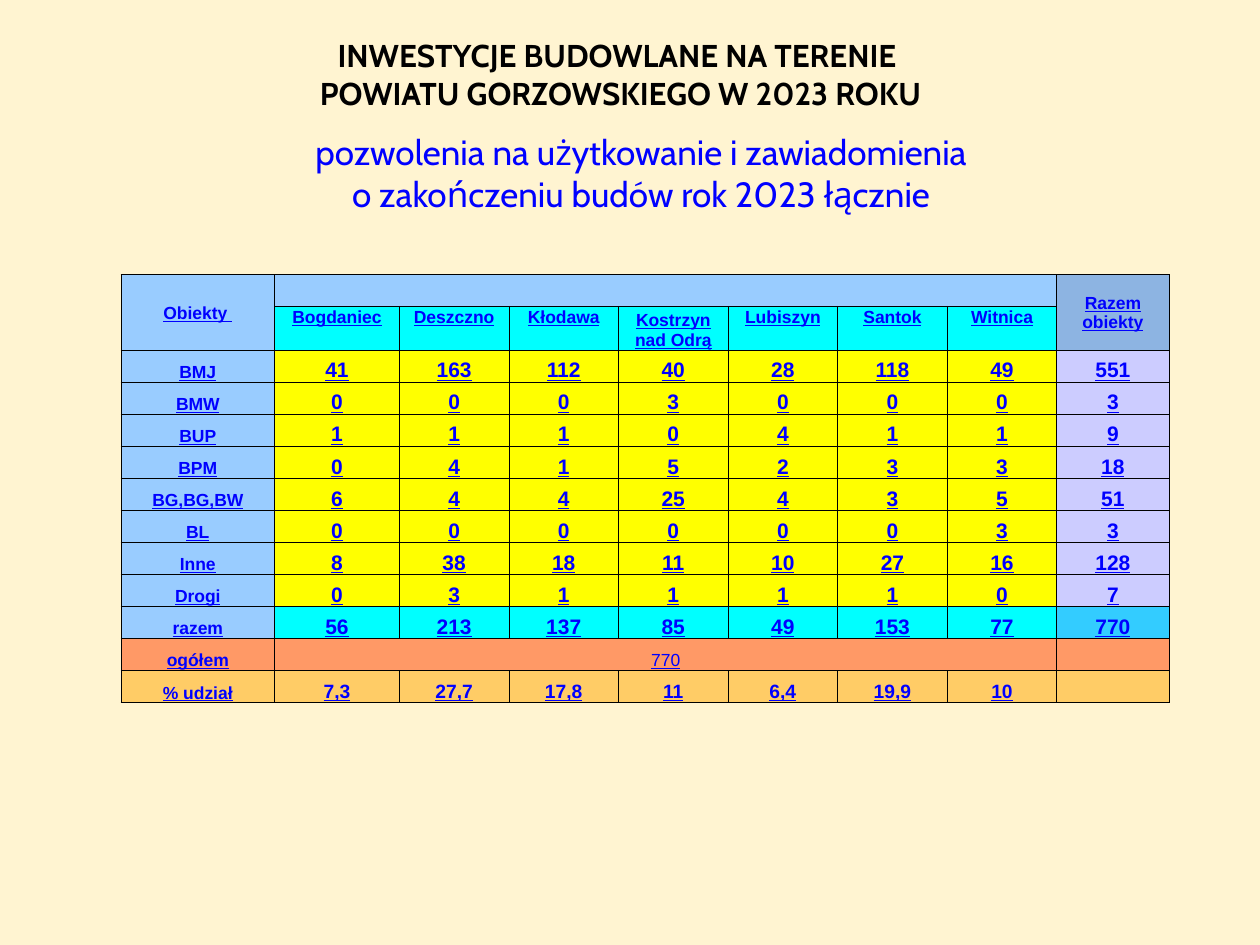
from lxml.etree import SubElement as Sub
from pptx import Presentation
from pptx.dml.color import RGBColor as RGB
from pptx.enum.text import MSO_ANCHOR as Anchor, PP_ALIGN as Align
from pptx.oxml.ns import qn
from pptx.util import Inches, Pt

COLORS = {
    "cream": "FFF4D1", "black": "000000", "text": "0000FF",
    "sky": "99CCFF", "steel": "8DB4E2", "cyan": "00FFFF",
    "yellow": "FFFF00", "lilac": "CCCCFF", "azure": "33CCFF",
    "coral": "FF9966", "amber": "FFCC66",
}
TITLE = "INWESTYCJE BUDOWLANE NA TERENIE \vPOWIATU GORZOWSKIEGO W 2023 ROKU"
SUBTITLE = ["pozwolenia na użytkowanie i zawiadomienia ",
            "o zakończeniu budów rok 2023 łącznie "]
TOWNS = ["Bogdaniec", "Deszczno", "Kłodawa", "Kostrzyn nad Odrą",
         "Lubiszyn", "Santok", "Witnica"]
COUNTS = [
    ("BMJ", 41, 163, 112, 40, 28, 118, 49, 551),
    ("BMW", 0, 0, 0, 3, 0, 0, 0, 3),
    ("BUP", 1, 1, 1, 0, 4, 1, 1, 9),
    ("BPM", 0, 4, 1, 5, 2, 3, 3, 18),
    ("BG,BG,BW", 6, 4, 4, 25, 4, 3, 5, 51),
    ("BL", 0, 0, 0, 0, 0, 0, 3, 3),
    ("Inne", 8, 38, 18, 11, 10, 27, 16, 128),
    ("Drogi", 0, 3, 1, 1, 1, 1, 0, 7),
]
SUMS = ("razem", 56, 213, 137, 85, 49, 153, 77, 770)
TOTAL = ("ogółem", 770) + ("",) * 7
SHARES = ("% udział", "7,3", "27,7", "17,8", "11", "6,4", "19,9", "10", "")

# Each row: texts, fills of (label, towns, last column), size of the numbers
ROWS = [
    (["Obiekty "] + [""] * 7 + ["Razem obiekty"], ("sky", "sky", "steel"), 10),
    ([""] + TOWNS + [""], ("sky", "cyan", "steel"), 10),
    *[(row, ("sky", "yellow", "lilac"), 12) for row in COUNTS],
    (SUMS, ("sky", "cyan", "azure"), 12),
    (TOTAL, ("coral",) * 3, 10),
    (SHARES, ("amber",) * 3, 11),
]
MERGES = [((0, 0), (1, 0)), ((0, 1), (0, 7)), ((0, 8), (1, 8)), ((11, 1), (11, 7))]
WIDTHS = [1.22, 0.99] + [0.87] * 6 + [0.89]
HEAD, HIGH = [0.25, 0.35], 3.4
BODY = (HIGH - sum(HEAD)) / (len(ROWS) - len(HEAD))
HEIGHTS = HEAD + [BODY] * (len(ROWS) - len(HEAD))


def rgb(name):
    return RGB.from_string(COLORS[name])


def style(para, face, size, color, bold=False, line=False):
    para.alignment = Align.CENTER
    for run in para.runs:
        font = run.font
        font.name, font.size, font.bold = face, Pt(size), bold
        font.underline = line
        font.color.rgb = rgb(color)


def place(shape, box):
    shape.left, shape.top, shape.width, shape.height = map(Inches, box)


def border(cell):
    props = cell._tc.get_or_add_tcPr()
    for side in "LRTB":
        line = Sub(props, qn(f"a:ln{side}"), w=str(Pt(0.5)))
        Sub(Sub(line, qn("a:solidFill")), qn("a:srgbClr"), val=COLORS["black"])


def anchor(row, col):
    if row < 2 and col in (0, 8):
        return Anchor.MIDDLE
    if row == 1 and col != 4:
        return Anchor.TOP
    return Anchor.BOTTOM


def fill_cell(cell, row, col, text, fill, size, bold):
    border(cell)
    cell.fill.solid()
    cell.fill.fore_color.rgb = rgb(fill)
    cell.margin_left = cell.margin_right = cell.margin_top = Inches(0.01)
    cell.margin_bottom = 0
    cell.vertical_anchor = anchor(row, col)
    para = cell.text_frame.paragraphs[0]
    if text == "":
        para._p.get_or_add_endParaRPr().set("sz", "1000")
        return
    para.text = str(text)
    style(para, "Arial", size, "text", bold, True)


def add_grid(slide):
    frame = slide.shapes.add_table(
        len(ROWS), len(WIDTHS), Inches(0.96), Inches(2.18),
        Inches(sum(WIDTHS)), Inches(HIGH))
    table = frame.table
    table.first_row = table.horz_banding = False
    for col, width in zip(table.columns, WIDTHS):
        col.width = Inches(width)
    for row, height in zip(table.rows, HEIGHTS):
        row.height = Inches(height)
    for r, (texts, (first, mid, last), size) in enumerate(ROWS):
        fills = [first] + [mid] * 7 + [last]
        for c, (text, fill) in enumerate(zip(texts, fills)):
            bold = texts is not TOTAL or c == 0
            fill_cell(table.cell(r, c), r, c, text, fill, size if c else 10, bold)
    for start, end in MERGES:
        table.cell(*start).merge(table.cell(*end))


def main():
    deck = Presentation()
    deck.slide_width, deck.slide_height = Inches(10), Inches(7.5)
    slide = deck.slides.add_slide(deck.slide_layouts[5])
    slide.background.fill.solid()
    slide.background.fill.fore_color.rgb = rgb("cream")

    title = slide.shapes.title
    place(title, (2.09, 0.23, 5.67, 0.71))
    title.text_frame.text = TITLE
    title.text_frame.vertical_anchor = Anchor.MIDDLE
    style(title.text_frame.paragraphs[0], "Cabin", 18, "black", True)

    sub = slide.shapes.add_textbox(0, 0, 0, 0)
    place(sub, (0.59, 0.99, 9.06, 0.77))
    sub.text_frame.word_wrap = True
    sub.text_frame.text = "\n".join(SUBTITLE)
    for para in sub.text_frame.paragraphs:
        style(para, "Cabin", 20, "text")

    add_grid(slide)
    deck.save("out.pptx")


if __name__ == "__main__":
    main()
